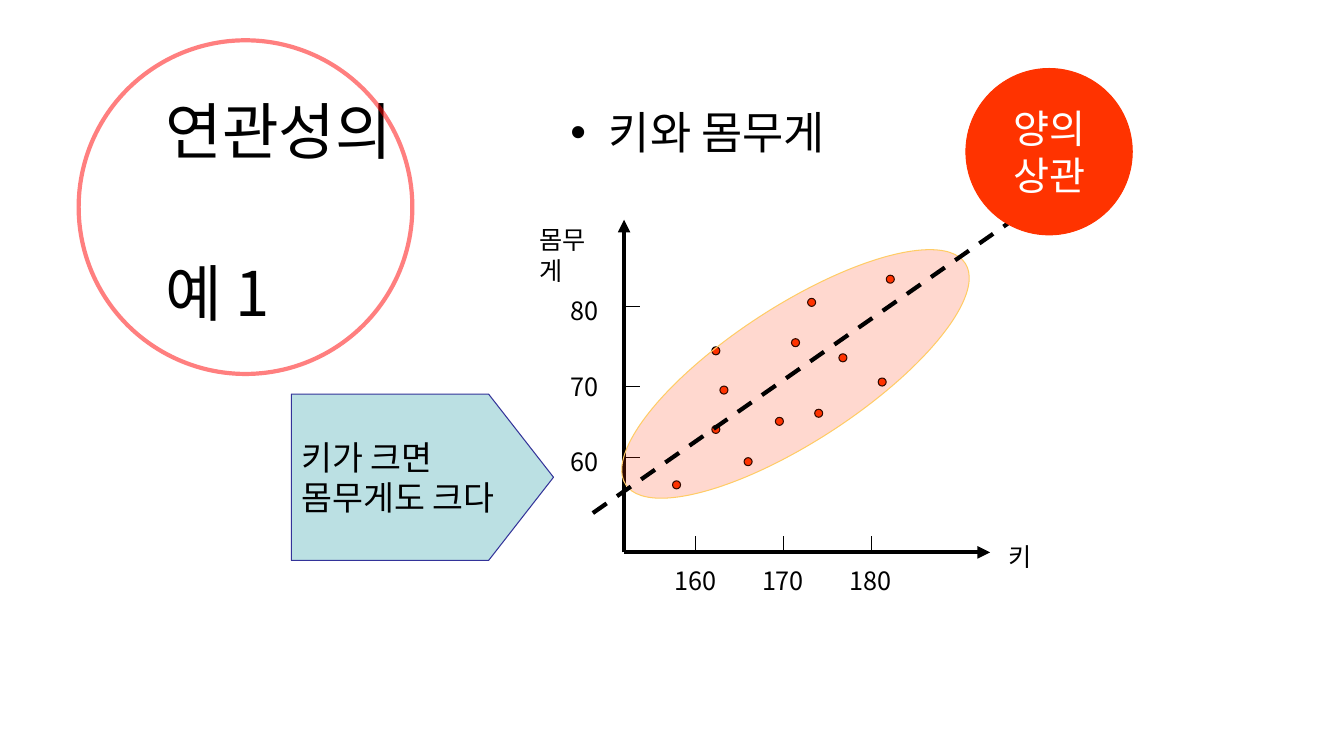
from dataclasses import dataclass
from lxml.etree import SubElement
from pptx import Presentation
from pptx.dml.color import RGBColor
from pptx.enum.dml import MSO_LINE
from pptx.enum.shapes import MSO_CONNECTOR, MSO_SHAPE
from pptx.enum.text import MSO_ANCHOR, PP_ALIGN
from pptx.oxml.ns import qn
from pptx.util import Inches, Pt

TITLE = "연관성의 \v예 1"
TOPIC = "키와 몸무게"
CLAIM = ["키가 크면", "몸무게도 크다"]
BADGE = ["양의", "상관"]
XTICKS = [("160", 6.9), ("170", 7.77), ("180", 8.64)]
YTICKS = [("80", 3.04), ("70", 3.83), ("60", 4.54)]
YLABELS = 2.88, 0.75
DOTS = [(7.69, 4.14), (8.79, 2.73), (7.85, 3.36), (8.32, 3.51),
        (8.08, 4.06), (7.06, 4.22), (6.67, 4.77), (7.14, 3.83),
        (7.38, 4.54), (8.01, 2.96), (8.71, 3.75), (7.06, 3.44)]
ORIGIN = 6.19, 5.48


@dataclass(frozen=True)
class Theme:
    """Colours, font and type sizes."""
    font: str = "Noto Sans CJK KR"
    ink: str = "000000"
    white: str = "FFFFFF"
    red: str = "FF3300"
    ring: str = "FF0000"
    gold: str = "FFCC66"
    teal: str = "BBE0E3"
    navy: str = "333399"
    title: int = 44
    topic: int = 32
    badge: int = 28
    claim: int = 24
    label: int = 18
    thin: float = 0.75
    bold: int = 3


theme = Theme()


def rgb(code):
    """Turn a hex code into a colour."""
    return RGBColor.from_string(code)


def fade(fill, part):
    """Make a solid fill partly clear."""
    tone = fill._xPr.find(".//" + qn("a:srgbClr"))
    SubElement(tone, qn("a:alpha"), val=str(part * 1000))


def write(shape, lines, size, color=theme.ink, align=PP_ALIGN.LEFT, wrap=True):
    """Fill a shape with styled paragraphs."""
    frame = shape.text_frame
    frame.word_wrap = wrap
    frame.text = "\n".join(lines)
    for para in frame.paragraphs:
        para.alignment = align
        para.font.size = Pt(size)
        para.font.name = theme.font
        para.font.color.rgb = rgb(color)
        for run in para.runs:
            SubElement(run._r.get_or_add_rPr(), qn("a:ea"), typeface=theme.font)
    return frame


def label(slide, text, box, size=theme.label, wrap=False):
    """Add a text box."""
    return write(slide.shapes.add_textbox(*map(Inches, box)), [text], size, wrap=wrap)


def shape(slide, kind, box, fill, line, width=theme.thin):
    """Add a preset shape with a fill and an outline."""
    item = slide.shapes.add_shape(kind, *map(Inches, box))
    item.shadow.inherit = False
    if fill:
        item.fill.solid()
        item.fill.fore_color.rgb = rgb(fill)
    else:
        item.fill.background()
    item.line.color.rgb = rgb(line)
    item.line.width = Pt(width)
    return item


def rule(slide, start, end, width=theme.thin, arrow=False):
    """Add a straight line, with an arrowhead if asked."""
    item = slide.shapes.add_connector(MSO_CONNECTOR.STRAIGHT, *map(Inches, start + end))
    item.line.color.rgb = rgb(theme.ink)
    item.line.width = Pt(width)
    if arrow:
        SubElement(item.line._get_or_add_ln(), qn("a:tailEnd"), type="triangle")
    SubElement(item._element.spPr, qn("a:effectLst"))
    return item


def axes(slide):
    """Draw the axes with ticks and labels."""
    left, base = ORIGIN
    for end in ((left, 2.18), (9.82, base)):
        rule(slide, ORIGIN, end, theme.bold, True)
    label(slide, "키", (9.9, 5.32, 0.41, 0.4))
    label(slide, "몸무게", (5.25, 2.18, 0.82, 0.4), wrap=True)
    for text, x in XTICKS:
        rule(slide, (x, base), (x, base - 0.16))
        label(slide, text, (x - 0.31, 5.56, 0.66, 0.4))
    top, step = YLABELS
    for i, (text, y) in enumerate(YTICKS):
        rule(slide, (left, y), (left + 0.16, y))
        label(slide, text, (5.56, top + i * step, 0.48, 0.4))


def main():
    """Build and save the slide."""
    deck = Presentation()
    deck.slide_width, deck.slide_height = Inches(13.33), Inches(7.5)
    slide = deck.slides.add_slide(deck.slide_layouts[5])
    oval = MSO_SHAPE.OVAL

    title = slide.shapes.title
    title.left, title.top, title.width, title.height = map(Inches, (1.54, 0.92, 2.53, 2.27))
    frame = write(title, [TITLE], theme.title)
    frame.vertical_anchor = MSO_ANCHOR.MIDDLE
    frame.paragraphs[0].line_spacing = 1.1

    topic = label(slide, TOPIC, (5.56, 0.99, 5.52, 0.95), theme.topic, True)
    props = topic.paragraphs[0]._p.get_or_add_pPr()
    props.set("marL", str(Inches(0.38)))
    props.set("indent", str(-Inches(0.38)))
    SubElement(props, qn("a:buFont"), typeface="Arial")
    SubElement(props, qn("a:buChar"), char="•")
    props.append(props.find(qn("a:defRPr")))

    axes(slide)
    for x, y in DOTS:
        shape(slide, oval, (x, y, 0.08, 0.08), theme.red, theme.ink)
    cloud = shape(slide, oval, (5.88, 3.04, 4.02, 1.34), theme.red, theme.gold)
    cloud.rotation = 326.9
    fade(cloud.fill, 19)

    claim = shape(slide, MSO_SHAPE.PENTAGON, (2.89, 3.91, 2.6, 1.65), theme.teal, theme.navy)
    claim.adjustments[0] = 0.39
    write(claim, CLAIM, theme.claim)
    trend = rule(slide, (5.88, 5.09), (10.05, 2.18), theme.bold)
    trend.line.dash_style = MSO_LINE.DASH
    badge = shape(slide, oval, (9.58, 0.68, 1.65, 1.65), theme.red, theme.red)
    write(badge, BADGE, theme.badge, theme.white, PP_ALIGN.CENTER)
    ring = shape(slide, oval, (0.78, 0.4, 3.31, 3.31), None, theme.ring, theme.bold)
    fade(ring.line.fill, 50)
    deck.save("out.pptx")


if __name__ == "__main__":
    main()
